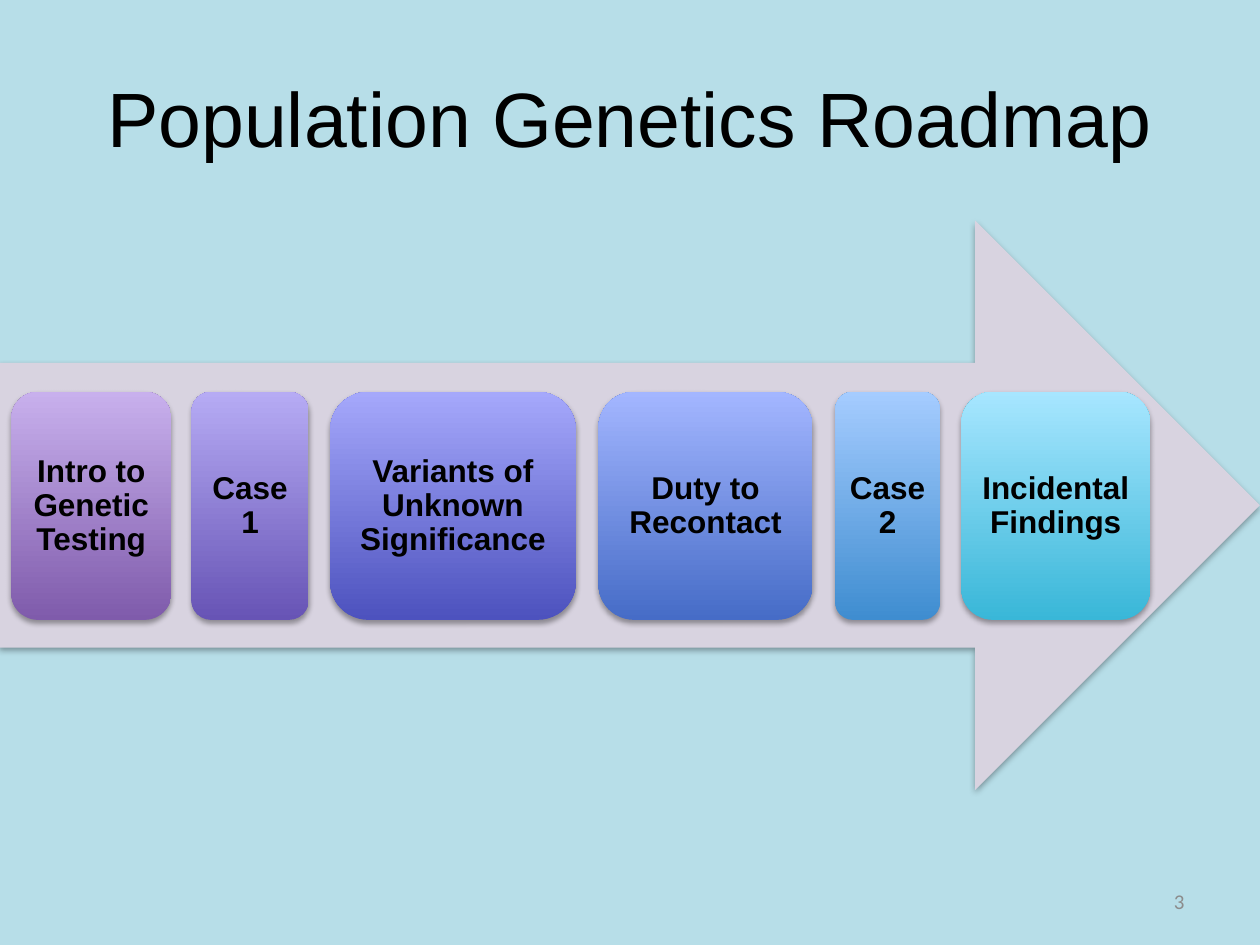
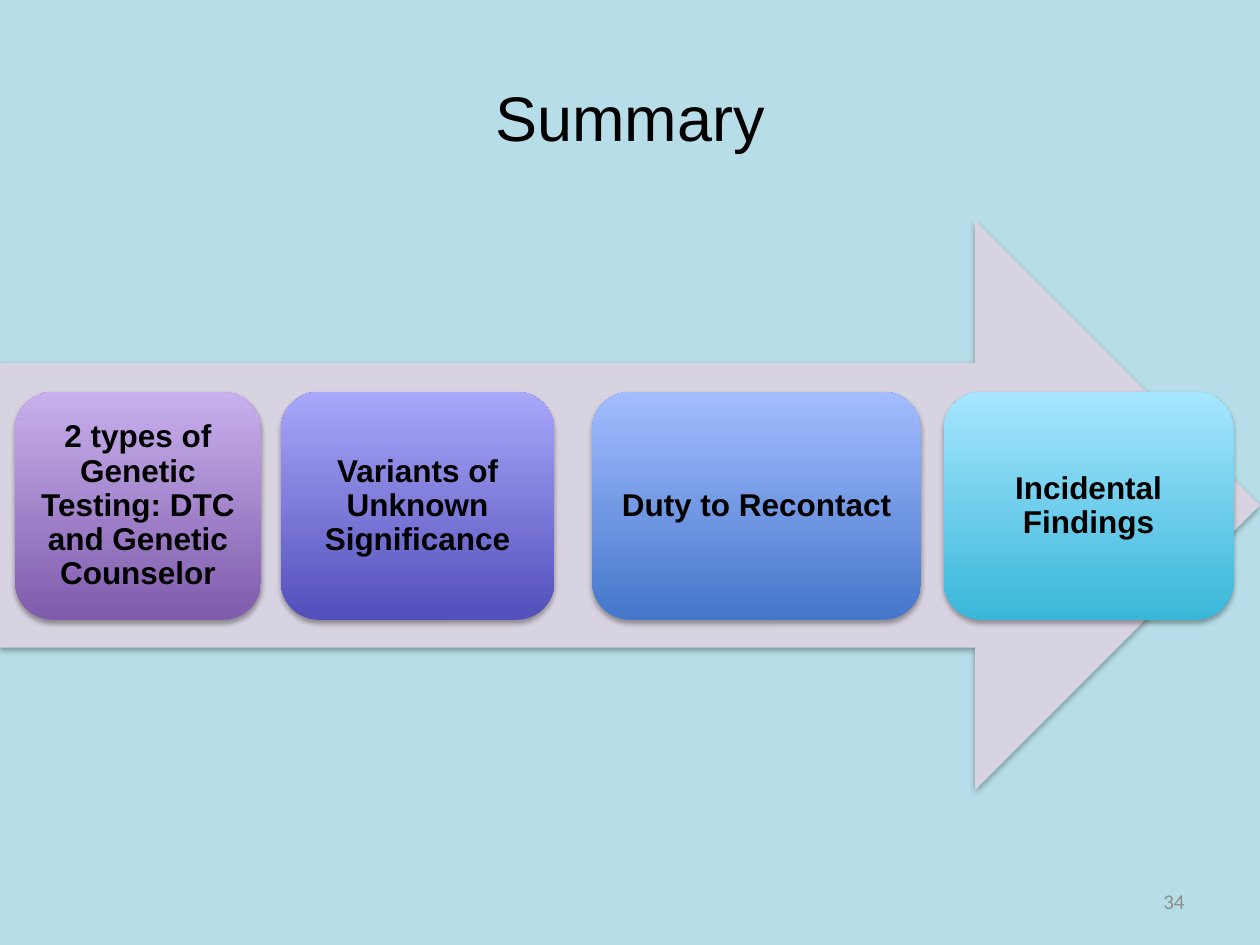
from dataclasses import dataclass

from lxml import etree
from pptx import Presentation
from pptx.dml.color import RGBColor
from pptx.enum.shapes import MSO_SHAPE
from pptx.enum.text import MSO_ANCHOR, PP_ALIGN
from pptx.oxml import parse_xml
from pptx.oxml.ns import nsdecls, qn
from pptx.util import Inches, Pt

ARROW = MSO_SHAPE.RIGHT_ARROW
ROUNDED = MSO_SHAPE.ROUNDED_RECTANGLE
MIDDLE = MSO_ANCHOR.MIDDLE
CENTER, RIGHT = PP_ALIGN.CENTER, PP_ALIGN.RIGHT
TITLE_ONLY = 5


@dataclass(frozen=True)
class Theme:
    background: str = "B7DEE8"
    arrow: str = "D8D3E0"
    text: str = "000000"
    number: str = "8C8C8C"
    font: str = "Arial"
    number_font: str = "Calibri"
    step_size: int = 18
    number_size: int = 12
    step_top: float = 3.11
    step_height: float = 1.81
    step_inset: float = 0.07


THEME = Theme()

# Each step: label, left, width, bottom colour, top colour
ROADMAP_STEPS = [
    ("Intro to Genetic Testing", 0.09, 1.27, "7F5BAB", "C8B0ED"),
    ("Case 1", 1.52, 0.93, "6754B5", "B6ABF4"),
    ("Variants of Unknown Significance", 2.62, 1.95, "4D52BE", "A5A8FB"),
    ("Duty to Recontact", 4.75, 1.7, "466CC7", "A3B6FF"),
    ("Case 2", 6.63, 0.83, "3F8DD0", "A5CCFF"),
    ("Incidental Findings", 7.63, 1.5, "39B7D8", "A7E6FF"),
]
SUMMARY_STEPS = [
    ("2 types of Genetic Testing: DTC and Genetic Counselor",
     0.12, 1.95, "7F5BAB", "C8B0ED"),
    ("Variants of Unknown Significance", 2.23, 2.17, "534FBB", "A9A7F9"),
    ("Duty to Recontact", 4.7, 2.61, "4476CA", "A4BDFF"),
    ("Incidental Findings", 7.49, 2.3, "39B7D8", "A7E6FF"),
]


def rgb(value):
    return RGBColor.from_string(value)


def write(tf, text, size, color, font=THEME.font, align=CENTER, bold=False):
    tf.word_wrap = True
    tf.vertical_anchor = MIDDLE
    p = tf.paragraphs[0]
    p.alignment = align
    r = p.add_run()
    r.text = text
    r.font.name, r.font.size, r.font.bold = font, Pt(size), bold
    r.font.color.rgb = rgb(color)
    return p


def add_soft_shadow(sp):
    """Replace the theme's shadow with a small one falling straight down."""
    sp.shadow.inherit = False
    effects = sp._element.spPr.find(qn("a:effectLst"))
    shadow = parse_xml(
        f'<a:outerShdw {nsdecls("a")} blurRad="{Pt(3.1)}" dist="{Pt(1.8)}" '
        'dir="5400000" rotWithShape="0"/>')
    color = etree.SubElement(shadow, qn("a:srgbClr"), val="000000")
    etree.SubElement(color, qn("a:alpha"), val="35000")
    effects.append(shadow)


def add_title(s, text, size):
    title = s.shapes.title
    title.left, title.top = Inches(0.5), Inches(0.3)
    title.width, title.height = Inches(9), Inches(1.25)
    write(title.text_frame, text, size, THEME.text)


def add_arrow(group):
    sp = group.shapes.add_shape(ARROW, 0, Inches(1.75), Inches(10), Inches(4.52))
    sp.fill.solid()
    sp.fill.fore_color.rgb = rgb(THEME.arrow)
    sp.line.fill.background()
    add_soft_shadow(sp)


def add_step(group, label, left, width, bottom_color, top_color):
    sp = group.shapes.add_shape(ROUNDED, Inches(left), Inches(THEME.step_top),
                                Inches(width), Inches(THEME.step_height))
    sp.fill.gradient()
    sp.fill.gradient_angle = 90
    for stop, color in zip(sp.fill.gradient_stops, (bottom_color, top_color)):
        stop.color.rgb = rgb(color)
    sp.line.fill.background()
    add_soft_shadow(sp)
    tf = sp.text_frame
    tf.margin_left = tf.margin_right = Inches(THEME.step_inset)
    tf.margin_top = tf.margin_bottom = Inches(THEME.step_inset)
    p = write(tf, label, THEME.step_size, THEME.text, bold=True)
    p.line_spacing = 0.9


def add_slide_number(s, number):
    box = s.shapes.add_textbox(Inches(7.17), Inches(6.95), Inches(2.33), Inches(0.4))
    write(box.text_frame, str(number), THEME.number_size, THEME.number,
          font=THEME.number_font, align=RIGHT)


def add_process_slide(prs, title, title_size, steps, number):
    s = prs.slides.add_slide(prs.slide_layouts[TITLE_ONLY])
    add_title(s, title, title_size)
    group = s.shapes.add_group_shape()
    add_arrow(group)
    for step in steps:
        add_step(group, *step)
    add_slide_number(s, number)


def main():
    prs = Presentation()
    prs.slide_width, prs.slide_height = Inches(10), Inches(7.5)
    fill = prs.slide_master.background.fill
    fill.solid()
    fill.fore_color.rgb = rgb(THEME.background)
    add_process_slide(prs, "Population Genetics Roadmap", 44, ROADMAP_STEPS, 3)
    add_process_slide(prs, "Summary", 36, SUMMARY_STEPS, 34)
    prs.save("out.pptx")


if __name__ == "__main__":
    main()
